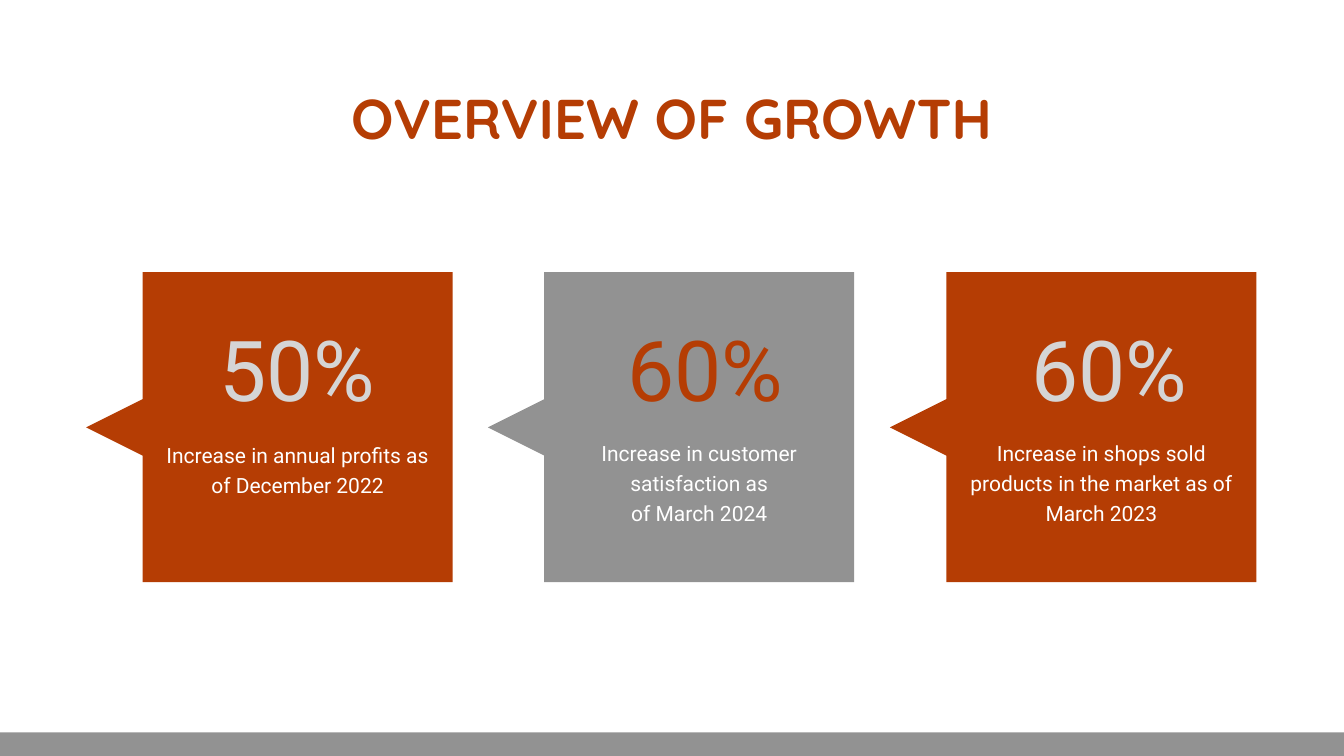
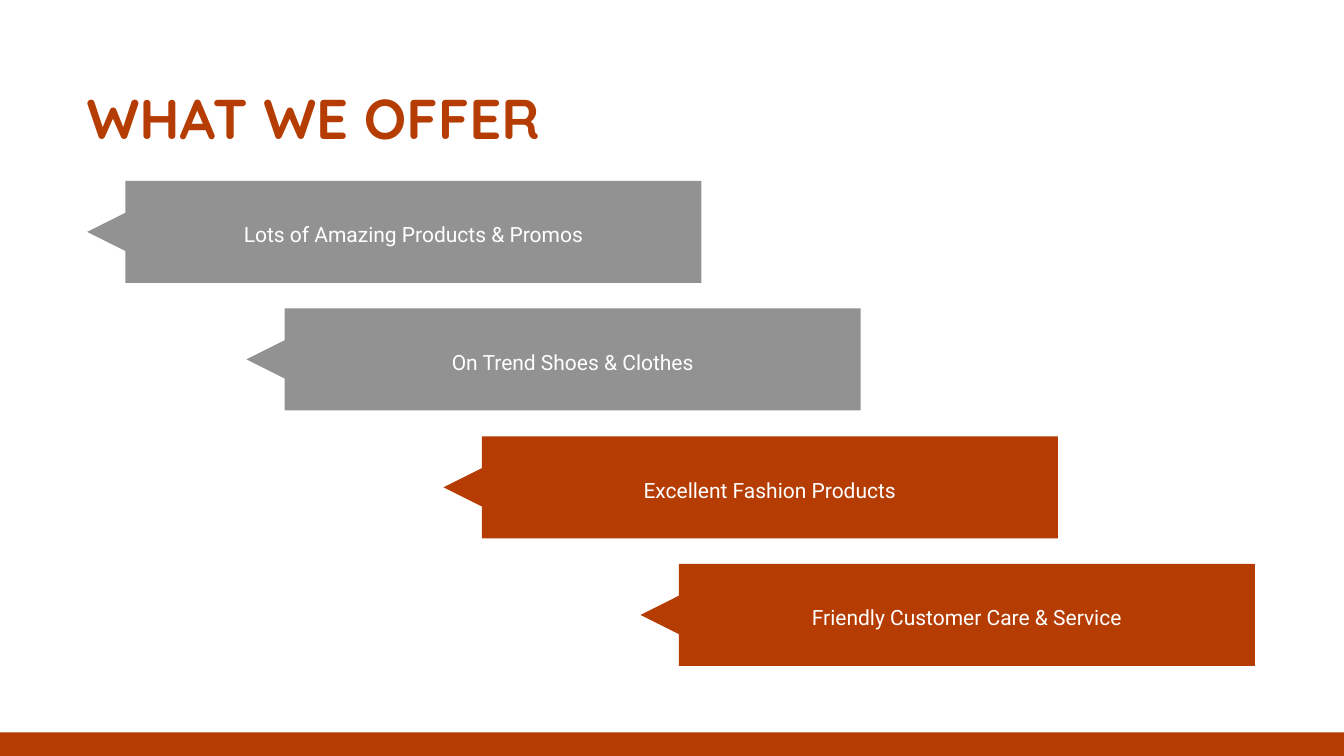
from pptx import Presentation
from pptx.dml.color import RGBColor
from pptx.enum.shapes import MSO_SHAPE as SHAPE
from pptx.enum.text import MSO_ANCHOR as ANCHOR, PP_ALIGN as ALIGN

PX = 9144  # 100 px to the inch
WIDTH, HEIGHT, BAND = 2667, 1500, 47
COLORS = {"rust": "B53D04", "gray": "929292", "silver": "D5D5D5", "white": "FFFFFF"}

GROWTH_TITLE = "OVERVIEW OF GROWTH"
# share, its colour, its offset and width, caption lines, caption top and height, fill
GROWTH = [
    ("50%", "silver", 247, 344, ["Increase in annual profits as of December 2022"], 868, 118, "rust"),
    ("60%", "rust", 259, 344, ["Increase in customer satisfaction as", "of March 2024"], 866, 176, "gray"),
    ("60%", "silver", 270, 330, ["Increase in shops sold products in the market as of March 2023"], 866, 176, "rust"),
]
OFFER_TITLE = "WHAT WE OFFER"
# offer, left of its pointer, fill
OFFERS = [
    ("Lots of Amazing Products & Promos", 173, "gray"),
    ("On Trend Shoes & Clothes", 489, "gray"),
    ("Excellent Fashion Products", 880, "rust"),
    ("Friendly Customer Care & Service", 1271, "rust"),
]


def paint(s, color):
    s.shadow.inherit = False
    s.fill.solid()
    s.fill.fore_color.rgb = RGBColor.from_string(COLORS[color])
    s.line.fill.background()


def add_text(slide, lines, x, y, w, h, font="Roboto", size=30, color="white",
             bold=False, align=ALIGN.CENTER, spacing=1.2):
    tf = slide.shapes.add_textbox(x * PX, y * PX, w * PX, h * PX).text_frame
    tf.word_wrap = True
    tf.vertical_anchor = ANCHOR.MIDDLE
    tf.margin_left = tf.margin_right = tf.margin_top = tf.margin_bottom = 6 * PX
    for i, line in enumerate(lines):
        p = tf.add_paragraph() if i else tf.paragraphs[0]
        p.alignment, p.line_spacing = align, spacing
        r = p.add_run()
        r.text = line
        r.font.name, r.font.size, r.font.bold = font, size * 12700, bold
        r.font.color.rgb = RGBColor.from_string(COLORS[color])


def add_callout(slide, x, y, w, h, notch, color):
    """Rectangle of w by h whose left side has a pointer with its tip at x."""
    left, mid, half = x + notch, y + h / 2, notch / 2
    right, bottom = left + w, y + h
    outline = slide.shapes.build_freeform(left, y, scale=PX)
    outline.add_line_segments([
        (left, mid - half), (x, mid), (left, mid + half),
        (left, bottom), (right, bottom), (right, y)])
    paint(outline.convert_to_shape(), color)


def new_slide(prs, title, x, align, band_color):
    slide = prs.slides.add_slide(prs.slide_layouts[6])
    add_text(slide, [title], x, 118, 1490, 202, font="Quicksand", size=80,
             color="rust", bold=True, align=align)
    band = slide.shapes.add_shape(SHAPE.RECTANGLE, 0, (HEIGHT - BAND) * PX,
                                  WIDTH * PX, BAND * PX)
    paint(band, band_color)
    return slide


def build_growth(prs):
    slide = new_slide(prs, GROWTH_TITLE, 588, ALIGN.CENTER, "gray")
    for i, (share, color, dx, w, caption, top, h, fill) in enumerate(GROWTH):
        x = round(171 + 797.5 * i)
        add_callout(slide, x, 540, 615, 615, 112, fill)
        add_text(slide, caption, x + 135, top, 569, h)
        add_text(slide, [share], x + dx, 652, w, 206, size=120, color=color, spacing=0.7)


def build_offers(prs):
    slide = new_slide(prs, OFFER_TITLE, 166, ALIGN.LEFT, "rust")
    for i, (offer, x, fill) in enumerate(OFFERS):
        y = 359 + round(760 * i / 3)
        add_callout(slide, x, y, 1143, 202, 76, fill)
        add_text(slide, [offer], x + 218, y + 71, 859, 60)


def main():
    prs = Presentation()
    prs.slide_width, prs.slide_height = WIDTH * PX, HEIGHT * PX
    build_growth(prs)
    build_offers(prs)
    prs.save("out.pptx")


if __name__ == "__main__":
    main()
